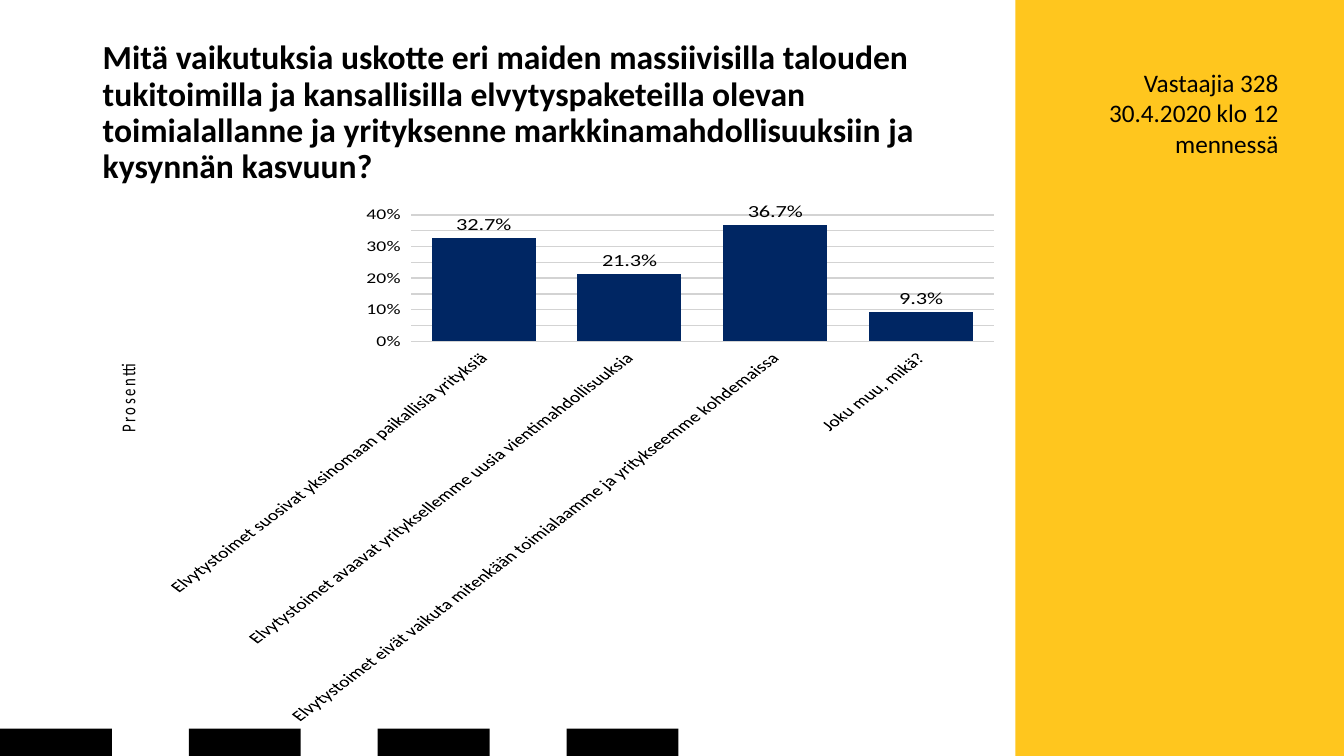
"""Build the survey slide about the expected effects of stimulus packages."""
from pptx import Presentation
from pptx.chart.data import CategoryChartData
from pptx.dml.color import RGBColor
from pptx.enum.chart import XL_CHART_TYPE, XL_LABEL_POSITION, XL_TICK_MARK
from pptx.enum.shapes import MSO_SHAPE
from pptx.enum.text import MSO_ANCHOR, PP_ALIGN
from pptx.util import Inches, Pt

COLUMN_CLUSTERED = XL_CHART_TYPE.COLUMN_CLUSTERED
OUTSIDE_END = XL_LABEL_POSITION.OUTSIDE_END
CROSS = XL_TICK_MARK.CROSS
RECTANGLE = MSO_SHAPE.RECTANGLE
TOP, MIDDLE = MSO_ANCHOR.TOP, MSO_ANCHOR.MIDDLE
LEFT, RIGHT = PP_ALIGN.LEFT, PP_ALIGN.RIGHT

WIDTH, HEIGHT = 13.33, 7.5
PANEL_LEFT = 10.07
BLOCK_WIDTH, BLOCK_HEIGHT, BLOCK_PITCH = 1.11, 0.27, 1.873
CONTENT_LEFT, CONTENT_WIDTH = 0.92, 9.12
FONT, BLACK, YELLOW, NAVY, GREY = "Calibri", "000000", "FFC61E", "002663", "D3D3D3"


def color(hex_value):
    """Turn a hex string into a colour."""
    return RGBColor.from_string(hex_value)


def style_font(font, size, bold=False):
    """Apply the slide's typeface in black."""
    font.name, font.size, font.bold = FONT, Pt(size), bold
    font.color.rgb = color(BLACK)


presentation = Presentation()
presentation.slide_width, presentation.slide_height = Inches(WIDTH), Inches(HEIGHT)
slide = presentation.slides.add_slide(presentation.slide_layouts[6])

rectangles = [(PANEL_LEFT, 0, WIDTH - PANEL_LEFT, HEIGHT, YELLOW)]
for column in range(4):
    rectangles.append((column * BLOCK_PITCH, HEIGHT - BLOCK_HEIGHT, BLOCK_WIDTH, BLOCK_HEIGHT, BLACK))
for *box, fill in rectangles:
    shape = slide.shapes.add_shape(RECTANGLE, *map(Inches, box))
    shape.shadow.inherit = False
    shape.fill.solid()
    shape.fill.fore_color.rgb = color(fill)
    shape.line.fill.background()

question = (
    "Mitä vaikutuksia uskotte eri maiden massiivisilla talouden tukitoimilla ja "
    "kansallisilla elvytyspaketeilla olevan toimialallanne ja yrityksenne "
    "markkinamahdollisuuksiin ja kysynnän kasvuun?"
)
texts = [
    ((CONTENT_LEFT, 0.4, CONTENT_WIDTH, 1.45), [question], 24, True, LEFT, MIDDLE, 0.9),
    ((10.71, 0.62, 2.07, 1.01), ["Vastaajia 328", "30.4.2020 klo 12 mennessä"], 18, False, RIGHT, TOP, 1.0),
]
for box, lines, size, bold, alignment, anchor, spacing in texts:
    frame = slide.shapes.add_textbox(*map(Inches, box)).text_frame
    frame.word_wrap = True
    frame.vertical_anchor = anchor
    for index, line in enumerate(lines):
        paragraph = frame.add_paragraph() if index else frame.paragraphs[0]
        paragraph.alignment, paragraph.line_spacing = alignment, spacing
        run = paragraph.add_run()
        run.text = line
        style_font(run.font, size, bold)

answers = {
    "Elvytystoimet suosivat yksinomaan paikallisia yrityksiä": 0.327,
    "Elvytystoimet avaavat yrityksellemme uusia vientimahdollisuuksia": 0.213,
    "Elvytystoimet eivät vaikuta mitenkään toimialaamme ja yritykseemme kohdemaissa": 0.367,
    "Joku muu, mikä?": 0.093,
}
chart_data = CategoryChartData(number_format="0.0%")
chart_data.categories = list(answers)
chart_data.add_series("Series 1", list(answers.values()))
chart_box = map(Inches, (CONTENT_LEFT, 2, CONTENT_WIDTH, 5.19))
chart = slide.shapes.add_chart(COLUMN_CLUSTERED, *chart_box, chart_data).chart
chart.has_legend = chart.has_title = False
style_font(chart.font, 18)

category_axis, value_axis = chart.category_axis, chart.value_axis
for axis in (category_axis, value_axis):
    axis.major_tick_mark = axis.minor_tick_mark = CROSS
    axis.format.line.fill.background()
    style_font(axis.tick_labels.font, 14)
category_axis.tick_labels.font._element.getparent().getparent().getparent().bodyPr.set("rot", "-2700000")

value_axis.minimum_scale, value_axis.maximum_scale, value_axis.major_unit = 0, 0.4, 0.05
value_axis.tick_labels.number_format = "0%"
value_axis.tick_labels.number_format_is_linked = False
value_axis.major_gridlines.format.line.color.rgb = color(GREY)
value_axis.major_gridlines.format.line.width = Pt(1)
title_frame = value_axis.axis_title.text_frame
title_run = title_frame.paragraphs[0].add_run()
title_run.text = "Prosentti"
style_font(title_run.font, 14)
title_frame._txBody.bodyPr.set("rot", "-5400000")

plot = chart.plots[0]
plot.gap_width, plot.vary_by_categories = 40, False
series = plot.series[0]
series.format.fill.solid()
series.format.fill.fore_color.rgb = color(NAVY)
series.format.line.fill.background()
labels = series.data_labels
labels.show_value, labels.position = True, OUTSIDE_END
labels.number_format, labels.number_format_is_linked = "0.0%", False
style_font(labels.font, 16)

presentation.save("out.pptx")
